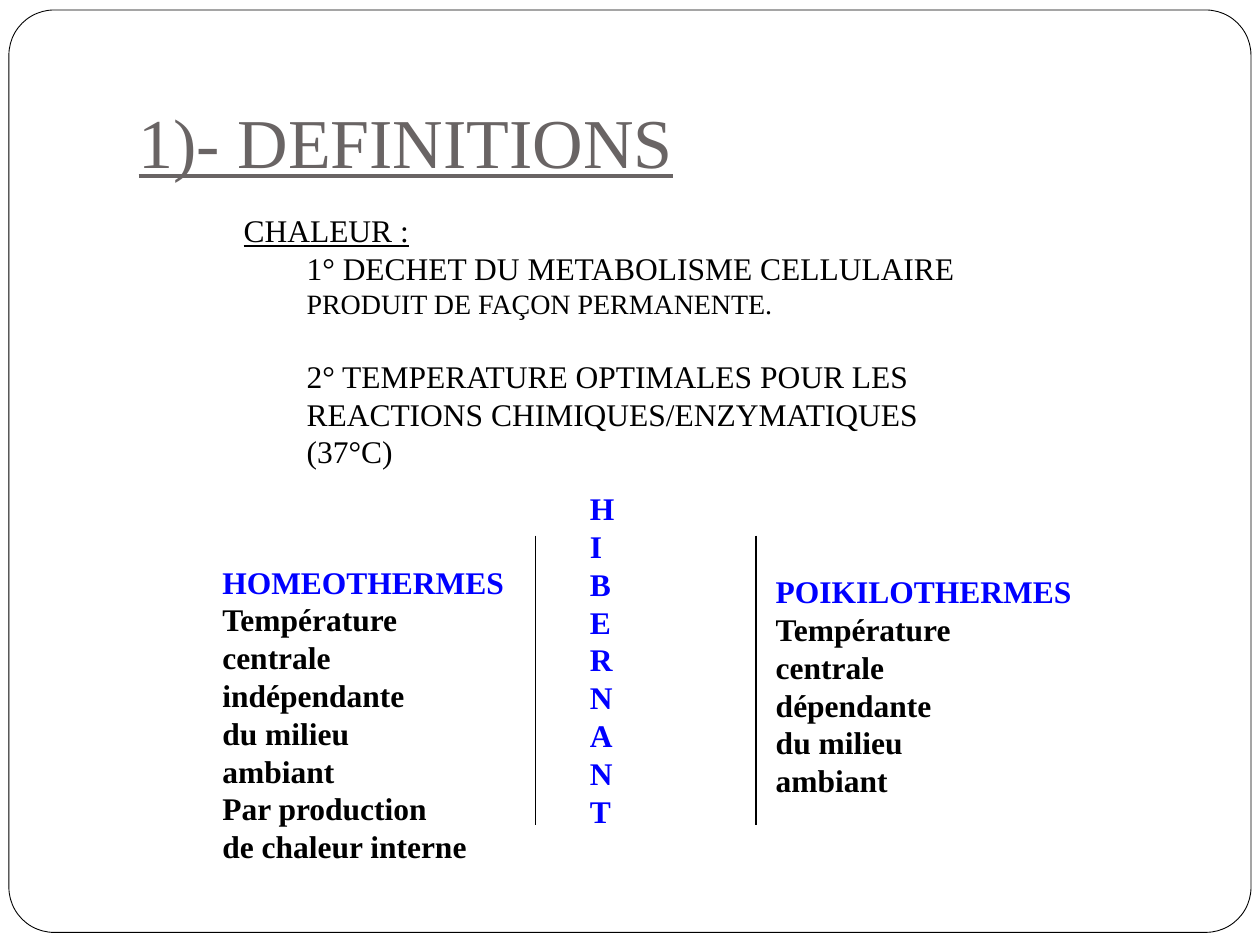
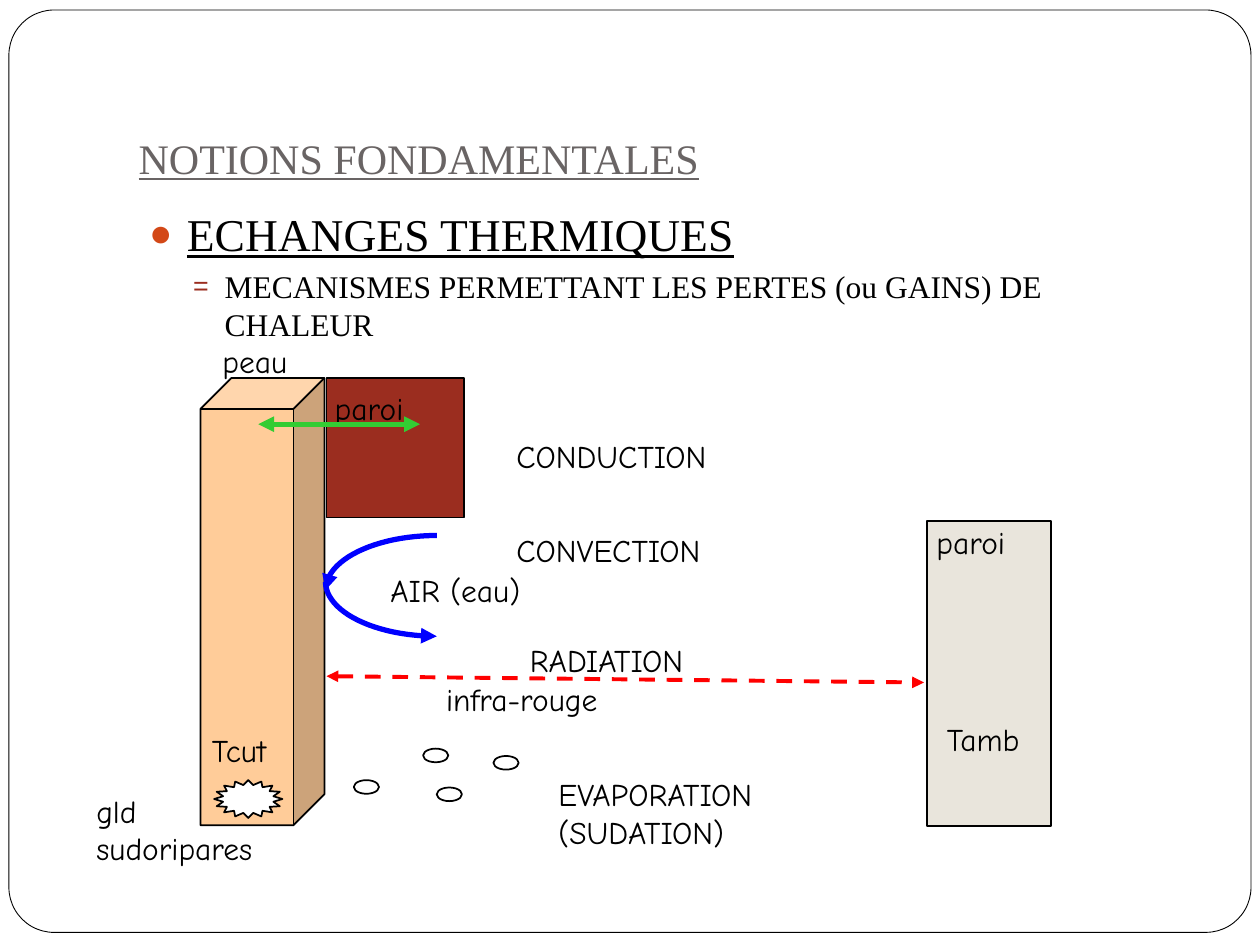
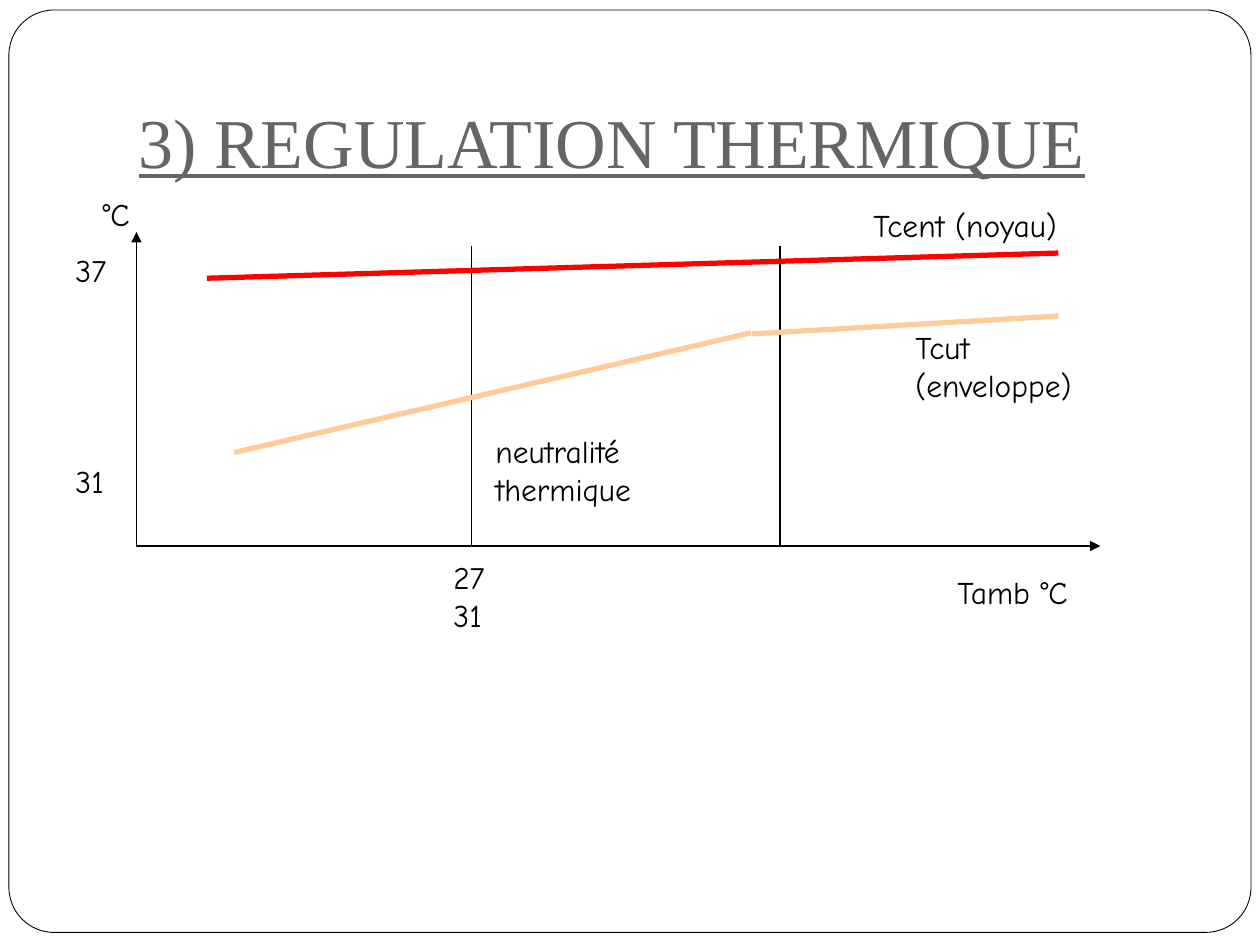
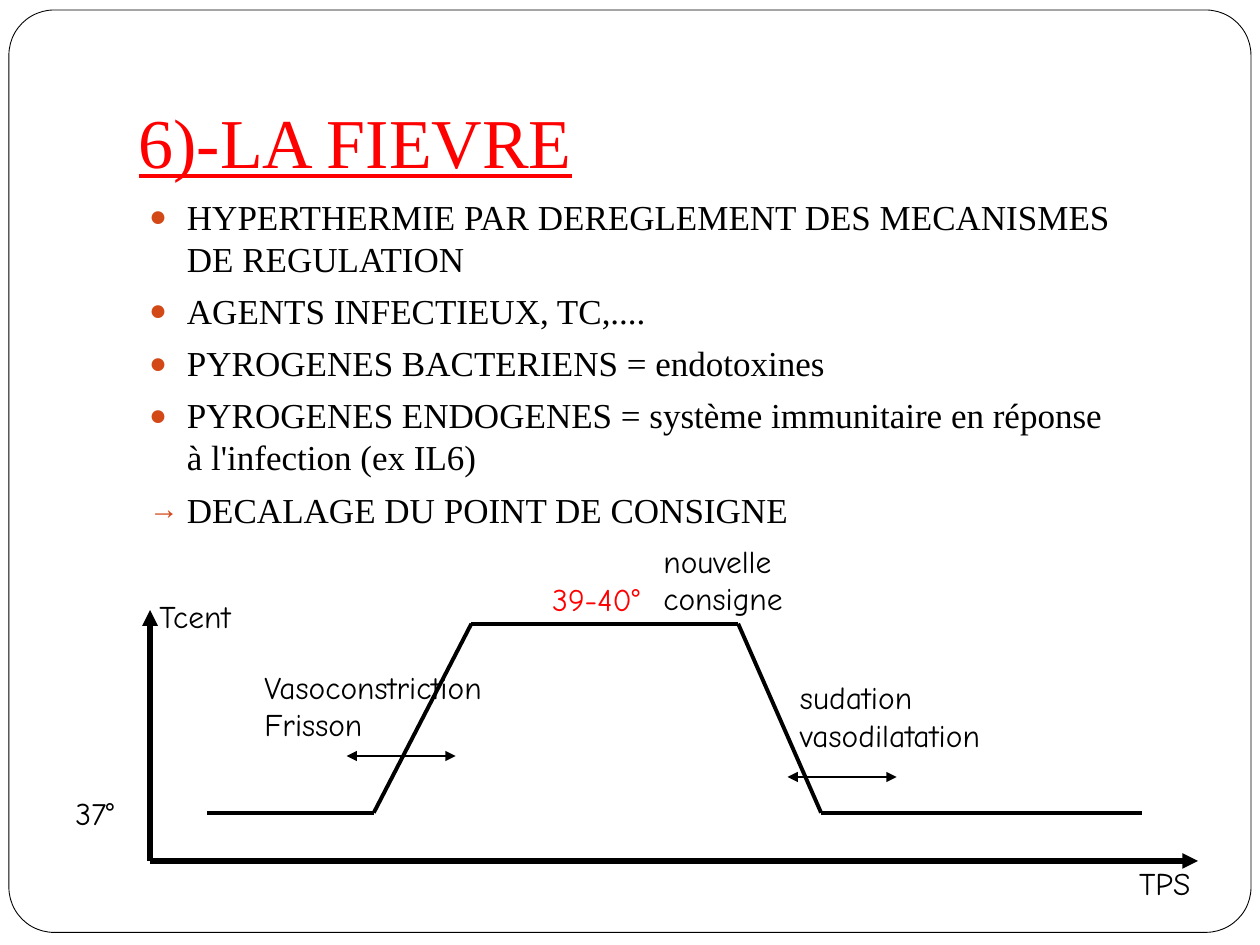
from dataclasses import dataclass
from itertools import pairwise
from math import cos, radians, sin

from lxml.etree import SubElement
from pptx import Presentation
from pptx.dml.color import RGBColor
from pptx.enum.dml import MSO_LINE
from pptx.enum.shapes import MSO_CONNECTOR, MSO_SHAPE
from pptx.enum.text import MSO_ANCHOR, MSO_AUTO_SIZE, PP_ALIGN
from pptx.oxml.ns import qn
from pptx.util import Inches, Pt

# Slide grid: 120 columns by 90 rows of 1/12 inch
COLUMNS, ROWS = 120, 90
CELL = Inches(10) / COLUMNS
LINE_ROWS, MARGIN_ROWS = 3.6, 1.2

SERIF, HAND = "Times New Roman", "Comic Neue"
BLACK, WHITE, GREY = "000000", "FFFFFF", "696464"
BLUE, RED, GREEN = "0000FF", "FF0000", "33CC33"
SKIN, BRICK, STONE, ORANGE = "FFCC99", "9B2D1F", "E9E5DC", "D34817"


@dataclass
class Box:
    """A region of the grid; its parts are placed from its top left corner."""
    left: float
    top: float
    width: float
    height: float

    def point(self, x, y):
        return round((self.left + x) * CELL), round((self.top + y) * CELL)

    def area(self, x=0, y=0, width=None, height=None):
        width = self.width if width is None else width
        height = self.height if height is None else height
        return *self.point(x, y), round(width * CELL), round(height * CELL)


def color(value):
    return RGBColor.from_string(value)


# Text
def add_text(paragraph, text, size=18, font=SERIF, fill=BLACK, bold=False, underline=False):
    run = paragraph.add_run()
    run.text = text
    run.font.size = Pt(size)
    run.font.name = font
    run.font.color.rgb = color(fill)
    run.font.bold = bold
    run.font.underline = underline


def next_paragraph(frame):
    first = frame.paragraphs[0]
    return first if not first.runs else frame.add_paragraph()


def set_indent(paragraph, left=0, first=0, before=0, level=0):
    paragraph.level = level
    paragraph.space_before = Pt(before)
    properties = paragraph._p.get_or_add_pPr()
    properties.set("marL", str(Inches(left)))
    properties.set("indent", str(Inches(first)))
    return properties


def set_bullet(properties, character=None, fill=ORANGE):
    if character is None:
        SubElement(properties, qn("a:buNone"))
        return
    bullet_color = SubElement(properties, qn("a:buClr"))
    SubElement(bullet_color, qn("a:srgbClr"), val=fill)
    SubElement(properties, qn("a:buSzPct"), val="85000")
    SubElement(properties, qn("a:buChar"), char=character)


def add_label(slide, box, x, y, width, *lines, heading=None, wrap=False, **text_format):
    """A text box, one line to a paragraph; heading colours the first line."""
    height = LINE_ROWS * len(lines) + MARGIN_ROWS
    frame = slide.shapes.add_textbox(*box.area(x, y, width, height)).text_frame
    frame.word_wrap = wrap
    frame.auto_size = MSO_AUTO_SIZE.SHAPE_TO_FIT_TEXT
    text_format = {"font": HAND, "fill": BLACK} | text_format
    for number, line in enumerate(lines):
        own = {"fill": heading} if heading and number == 0 else {}
        add_text(next_paragraph(frame), line, **(text_format | own))


def move_placeholder(placeholder, box):
    placeholder.left, placeholder.top, placeholder.width, placeholder.height = box.area()
    frame = placeholder.text_frame
    frame.word_wrap = True
    frame.auto_size = MSO_AUTO_SIZE.NONE
    return frame


def add_bullet(frame, text, character="●", bullet_fill=ORANGE, left=0.3, first=-0.3,
               before=5.8, level=0, **text_format):
    paragraph = next_paragraph(frame)
    set_bullet(set_indent(paragraph, left, first, before, level), character, bullet_fill)
    add_text(paragraph, text, **text_format)


# Shapes and lines
def add_part(slide, kind, area, fill=WHITE, weight=1, adjust=None):
    shape = slide.shapes.add_shape(kind, *area)
    shape.shadow.inherit = False
    shape.fill.solid()
    shape.fill.fore_color.rgb = color(fill)
    shape.line.color.rgb = color(BLACK)
    shape.line.width = Pt(weight)
    if adjust is not None:
        shape.adjustments[0] = adjust
    return shape


def style_line(shape, fill, weight, head=False, tail=False, dash=False):
    shape.line.color.rgb = color(fill)
    shape.line.width = Pt(weight)
    if dash:
        shape.line.dash_style = MSO_LINE.DASH
    outline = shape.element.spPr.find(qn("a:ln"))
    for wanted, tag in ((head, "a:headEnd"), (tail, "a:tailEnd")):
        if wanted:
            SubElement(outline, qn(tag), type="triangle")


def add_line(slide, box, start, end, fill=BLACK, weight=1, **ends):
    connector = slide.shapes.add_connector(
        MSO_CONNECTOR.STRAIGHT, *box.point(*start), *box.point(*end))
    style_line(connector, fill, weight, **ends)
    SubElement(connector.element.spPr, qn("a:effectLst"))


def add_quarter_curve(slide, box, center, radii, angles, **ends):
    """A quarter of an ellipse, drawn from the first angle to the second."""
    steps = 24
    first, last = angles
    turns = [radians(first + (last - first) * step / steps) for step in range(steps + 1)]
    points = [box.point(center[0] + radii[0] * cos(turn), center[1] + radii[1] * sin(turn))
              for turn in turns]
    builder = slide.shapes.build_freeform(*points[0])
    builder.add_line_segments(points[1:], close=False)
    curve = builder.convert_to_shape()
    curve.shadow.inherit = False
    curve.fill.background()
    style_line(curve, BLUE, 3, **ends)


# Shared slide furniture
def add_master_frame(presentation, slide):
    """Draw the rounded frame and hand it over to the slide master."""
    area = Box(0.85, 0.95, 118.3, 87.85).area()
    frame = add_part(slide, MSO_SHAPE.ROUNDED_RECTANGLE, area, weight=0.5, adjust=0.049)
    presentation.slide_master.shapes.element.insert(2, frame.element)


def add_titled_slide(presentation, title, layout="Title and Content", size=40, fill=GREY):
    slide = presentation.slides.add_slide(presentation.slide_layouts.get_by_name(layout))
    frame = move_placeholder(slide.shapes.title, Box(12, 3.6, 102, 15))
    frame.vertical_anchor = MSO_ANCHOR.BOTTOM
    frame.margin_bottom = Inches(0.1)
    paragraph = frame.paragraphs[0]
    paragraph.alignment = PP_ALIGN.LEFT
    add_text(paragraph, title, size=size, fill=fill, underline=True)
    return slide


# Slide 1: definitions
def add_heat_definition(slide, box):
    frame = move_placeholder(slide.placeholders[1], box)
    frame.margin_top = Inches(0.34)
    add_bullet(frame, "CHALEUR :", None, left=0, first=0, before=0, underline=True)
    items = (
        ("1° DECHET DU METABOLISME CELLULAIRE", 0),
        ("2° TEMPERATURE OPTIMALES POUR LES", 21),
        ("REACTIONS CHIMIQUES/ENZYMATIQUES", 0),
        ("(37°C)", 0),
    )
    for text, before in items:
        add_bullet(frame, text, None, left=0.5, first=0, before=before, level=1)
    add_text(frame.paragraphs[1], " PRODUIT DE FAÇON PERMANENTE.", size=16)


def add_animal_comparison(slide, box):
    for x in (31, 52):
        add_line(slide, box, (x, 5), (x, 32.6))
    columns = (
        (0, 7, 30.2, ("HOMEOTHERMES", "Température", "centrale", "indépendante", "du milieu",
                      "ambiant", "Par production", "de chaleur interne")),
        (52.7, 7.9, 30.8, ("POIKILOTHERMES", "Température", "centrale", "dépendante",
                           "du milieu", "ambiant")),
    )
    for x, y, width, lines in columns:
        add_label(slide, box, x, y, width, *lines, heading=BLUE, font=SERIF, bold=True)
    add_label(slide, box, 35, 0, 4.8, *"HIBERNANT", font=SERIF, fill=BLUE, bold=True)


# Slide 2: heat exchange
def add_exchange_list(slide, box):
    frame = move_placeholder(slide.placeholders[1], box)
    add_bullet(frame, "ECHANGES THERMIQUES", size=26, underline=True)
    add_bullet(frame, "MECANISMES PERMETTANT LES PERTES (ou GAINS) DE CHALEUR", "=", BRICK,
               left=0.6, first=-0.25, before=3.7, level=1)


def add_exchange_diagram(slide, box):
    # Walls, skin, sweat gland and drops
    add_part(slide, MSO_SHAPE.RECTANGLE, box.area(23.1, 4, 13.1, 13.3), BRICK)
    add_part(slide, MSO_SHAPE.CUBE, box.area(11.1, 4, 11.8, 42.6), SKIN, adjust=0.25)
    add_part(slide, MSO_SHAPE.RECTANGLE, box.area(80.3, 17.6, 11.8, 29.1), STONE)
    add_part(slide, MSO_SHAPE.STAR_16_POINT, box.area(12.4, 42.3, 6.5, 3.6), adjust=0.375)
    for x, y in ((25.7, 42.3), (32.3, 39.3), (33.6, 43), (39, 40)):
        add_part(slide, MSO_SHAPE.OVAL, box.area(x, y, 2.4, 1.3))

    labels = (
        (12, 0, 8.8, "peau"),
        (22.7, 4.5, 9.4, "paroi"),
        (80, 17.2, 9.4, "paroi"),
        (40, 9, 23.6, "CONDUCTION"),
        (40, 18, 23.2, "CONVECTION"),
        (28, 21.8, 16, "AIR (eau)"),
        (41.3, 28.5, 20.9, "RADIATION"),
        (33.3, 32.2, 18.4, "infra-rouge"),
        (11, 37, 8.9, "Tcut"),
        (81, 36, 10.1, "Tamb"),
        (44, 41.2, 24.8, "EVAPORATION", "(SUDATION)"),
        (0, 42.8, 18.7, "gld", "sudoripares"),
    )
    for label in labels:
        add_label(slide, box, *label)

    # Conduction, convection and radiation arrows
    add_line(slide, box, (16.6, 8.4), (32, 8.4), GREEN, 3, head=True, tail=True)
    add_quarter_curve(slide, box, (33.6, 23.4), (10.6, 5.2), (90, 180), head=True)
    add_quarter_curve(slide, box, (33.6, 24.2), (10.6, 5.2), (180, 270), head=True)
    add_line(slide, box, (23.1, 32.4), (80, 33), RED, 2.25, head=True, tail=True, dash=True)


# Slide 3: temperature curves
def add_regulation_graph(slide, box):
    base = 34
    for x in (38.9, 68.3):
        add_line(slide, box, (x, base), (x, 5.4))
    add_line(slide, box, (7, 4.1), (7, base), head=True)
    add_line(slide, box, (7, base), (98.8, base), tail=True)

    curves = (
        ((13.7, 8.5), (94.8, 6.1), RED),
        ((16.3, 25.1), (65.5, 13.7), SKIN),
        ((65.6, 13.8), (94.8, 12.1), SKIN),
    )
    for start, end, fill in curves:
        add_line(slide, box, start, end, fill, 3)

    labels = (
        (2.6, 0, 5.4, "°C"),
        (0, 5.3, 6, "37"),
        (0, 25.4, 5.5, "31"),
        (76, 1, 21.5, "Tcent (noyau)"),
        (80, 12.7, 18.1, "Tcut", "(enveloppe)"),
        (40, 22.6, 16.6, "neutralité", "thermique"),
        (84, 36, 14, "Tamb °C"),
    )
    for label in labels:
        add_label(slide, box, *label)
    add_label(slide, box, 36, 34.6, 30.7, "27", "31", wrap=True)


# Slide 4: fever
def add_fever_list(slide, box):
    frame = move_placeholder(slide.placeholders[1], box)
    items = (
        "HYPERTHERMIE PAR DEREGLEMENT DES MECANISMES DE REGULATION",
        "AGENTS INFECTIEUX, TC,....",
        "PYROGENES BACTERIENS = endotoxines",
        "PYROGENES ENDOGENES = système immunitaire en réponse à l'infection (ex IL6)",
    )
    for item in items:
        add_bullet(frame, item, size=20)
    add_bullet(frame, "DECALAGE DU POINT DE CONSIGNE", "→", size=20)


def add_fever_graph(slide, box):
    # Axes
    origin = (8.3, 31)
    add_line(slide, box, (8.3, 7.1), origin, weight=3, head=True)
    add_line(slide, box, origin, (108.1, 31), weight=3, tail=True)

    # Temperature course
    normal, fever = 26.4, 8.4
    course = ((13.7, normal), (29.6, normal), (38.9, fever),
              (64.3, fever), (72.2, normal), (102.8, normal))
    for start, end in pairwise(course):
        add_line(slide, box, start, end, weight=2.25)

    # Spans of the rise and the fall
    for x, y in ((27, 21), (69, 23)):
        add_line(slide, box, (x, y), (x + 10.4, y), head=True, tail=True)

    labels = (
        (8, 5.3, 10.6, "Tcent"),
        (0, 24, 7.3, "37°"),
        (101.3, 30.7, 8, "TPS"),
        (18, 12, 25.7, "Vasoconstriction", "Frisson"),
        (69, 13, 21.7, "sudation", "vasodilatation"),
        (56, 0, 14.2, "nouvelle", "consigne"),
    )
    for label in labels:
        add_label(slide, box, *label)
    add_label(slide, box, 45.4, 3.7, 12.2, "39-40°", fill=RED)


def main():
    presentation = Presentation()
    presentation.slide_width = round(COLUMNS * CELL)
    presentation.slide_height = round(ROWS * CELL)

    slide = add_titled_slide(presentation, "1)- DEFINITIONS")
    add_master_frame(presentation, slide)
    add_heat_definition(slide, Box(22, 16, 81, 29.6))
    add_animal_comparison(slide, Box(20, 46, 84, 41))

    slide = add_titled_slide(presentation, "NOTIONS FONDAMENTALES", size=24)
    add_exchange_list(slide, Box(13, 19, 94, 61))
    add_exchange_diagram(slide, Box(8, 32, 93, 52))

    slide = add_titled_slide(presentation, "3) REGULATION THERMIQUE", "Title Only")
    add_regulation_graph(slide, Box(6, 18, 99, 43))

    slide = add_titled_slide(presentation, "6)-LA FIEVRE", fill=RED)
    add_fever_list(slide, Box(13, 18, 94, 62))
    add_fever_graph(slide, Box(6, 51, 109, 36))

    presentation.save("out.pptx")


if __name__ == "__main__":
    main()
